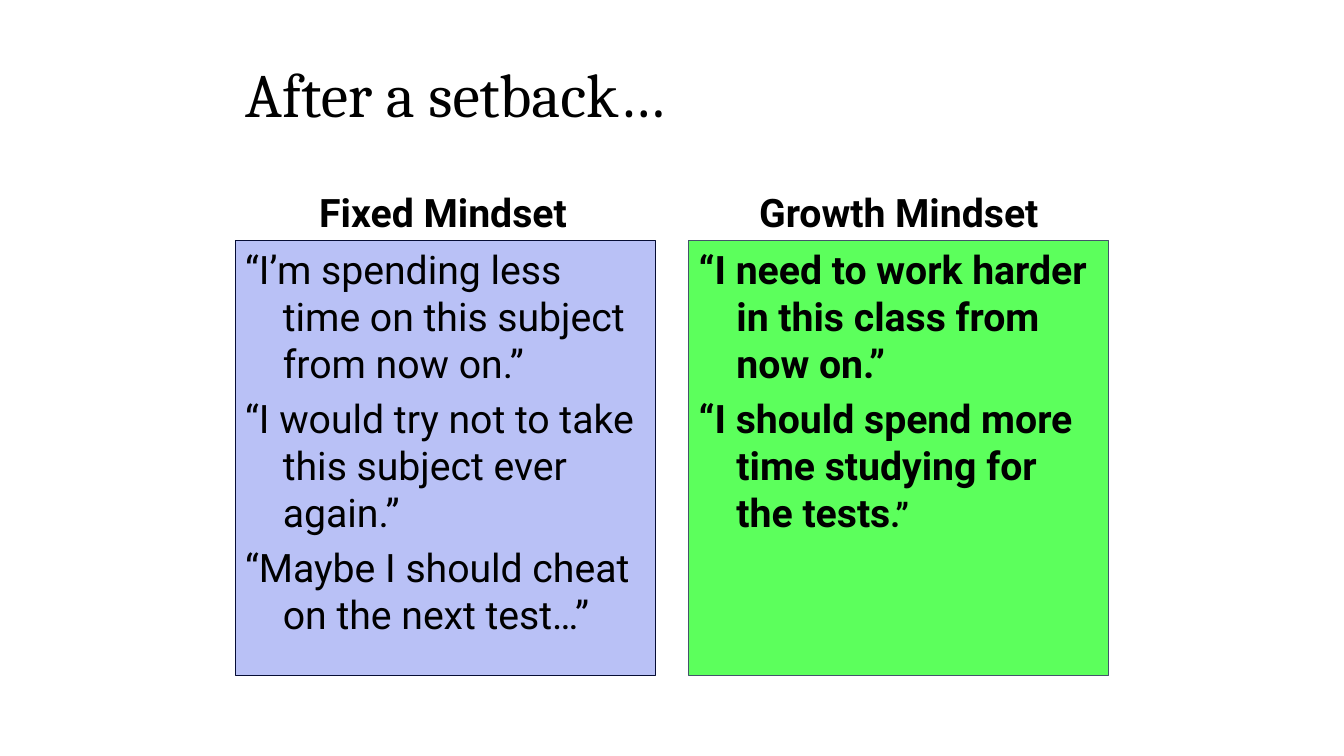
from dataclasses import dataclass

from pptx import Presentation
from pptx.dml.color import RGBColor
from pptx.enum.shapes import MSO_SHAPE as Preset
from pptx.enum.text import MSO_ANCHOR as Anchor, PP_ALIGN as Align
from pptx.shapes.autoshape import Shape
from pptx.slide import Slide
from pptx.util import Cm, Pt


@dataclass(frozen=True)
class Theme:
    ink: str = "000000"
    title_font: str = "Cambria"
    body_font: str = "Roboto"
    title_size: int = 44
    body_size: int = 28
    small_size: int = 24
    quote_gap: float = 5.6
    outline: float = 0.75


@dataclass(frozen=True)
class Span:
    text: str
    size: int


@dataclass(frozen=True)
class Mindset:
    heading: str
    quotes: list[list[Span]]
    fill: str
    line: str
    bold: bool


THEME = Theme()
LEFT, COLUMN_WIDTH, COLUMN_PITCH = 5.93, 10.58, 11.43
HEADING_TOP, HEADING_HEIGHT = 4.27, 1.78
PANEL_TOP, PANEL_HEIGHT = HEADING_TOP + HEADING_HEIGHT, 10.97
HANGING = Cm(0.95)


def quote(text: str) -> Span:
    return Span(text, THEME.body_size)


MINDSETS = [
    Mindset(
        "Fixed Mindset\t",
        [
            [quote("“I’m spending less time on this subject from now on.”")],
            [quote("“I would try not to take this subject ever again.”")],
            [quote("“Maybe I should cheat on the next test…”")],
        ],
        fill="B9C1F6", line="060D35", bold=False,
    ),
    Mindset(
        "Growth Mindset",
        [
            [quote("“I need to work harder in this class from now on.”")],
            [
                quote("“I should spend more time studying for the tests"),
                Span(".”", THEME.small_size),
            ],
        ],
        fill="5CFF5C", line="44546A", bold=True,
    ),
]


def write_text(box: Shape, paragraphs: list[list[Span]], *,
               font: str = THEME.body_font, bold: bool = False,
               align: Align = Align.LEFT, anchor: Anchor = Anchor.TOP,
               hanging: int = 0, gap: float = 0) -> None:
    frame = box.text_frame
    frame.word_wrap = True
    frame.vertical_anchor = anchor
    for index, spans in enumerate(paragraphs):
        para = frame.add_paragraph() if index else frame.paragraphs[0]
        para.alignment = align
        if index:
            para.space_before = Pt(gap)
        if hanging:
            properties = para._p.get_or_add_pPr()
            properties.set("marL", str(hanging))
            properties.set("indent", str(-hanging))
        for span in spans:
            run = para.add_run()
            run.text = span.text
            run.font.name = font
            run.font.size = Pt(span.size)
            run.font.bold = bold
            run.font.color.rgb = RGBColor.from_string(THEME.ink)


def add_title(page: Slide, text: str) -> None:
    box = page.shapes.add_textbox(Cm(LEFT), Cm(0.76), Cm(COLUMN_PITCH + COLUMN_WIDTH), Cm(3.18))
    write_text(box, [[Span(text, THEME.title_size)]],
               font=THEME.title_font, anchor=Anchor.MIDDLE)


def add_mindset(page: Slide, mindset: Mindset, left: float) -> None:
    heading = page.shapes.add_textbox(
        Cm(left), Cm(HEADING_TOP), Cm(COLUMN_WIDTH), Cm(HEADING_HEIGHT))
    write_text(heading, [[Span(mindset.heading, THEME.body_size)]],
               bold=True, align=Align.CENTER, anchor=Anchor.BOTTOM)

    panel = page.shapes.add_shape(
        Preset.RECTANGLE, Cm(left), Cm(PANEL_TOP), Cm(COLUMN_WIDTH), Cm(PANEL_HEIGHT))
    panel.shadow.inherit = False
    panel.fill.solid()
    panel.fill.fore_color.rgb = RGBColor.from_string(mindset.fill)
    panel.line.color.rgb = RGBColor.from_string(mindset.line)
    panel.line.width = Pt(THEME.outline)
    write_text(panel, mindset.quotes, bold=mindset.bold,
               hanging=HANGING, gap=THEME.quote_gap)


def main() -> None:
    deck = Presentation()
    deck.slide_width, deck.slide_height = Cm(33.87), Cm(19.05)
    page = deck.slides.add_slide(deck.slide_layouts[6])
    add_title(page, "After a setback…")
    for column, mindset in enumerate(MINDSETS):
        add_mindset(page, mindset, LEFT + column * COLUMN_PITCH)
    deck.save("out.pptx")


if __name__ == "__main__":
    main()
